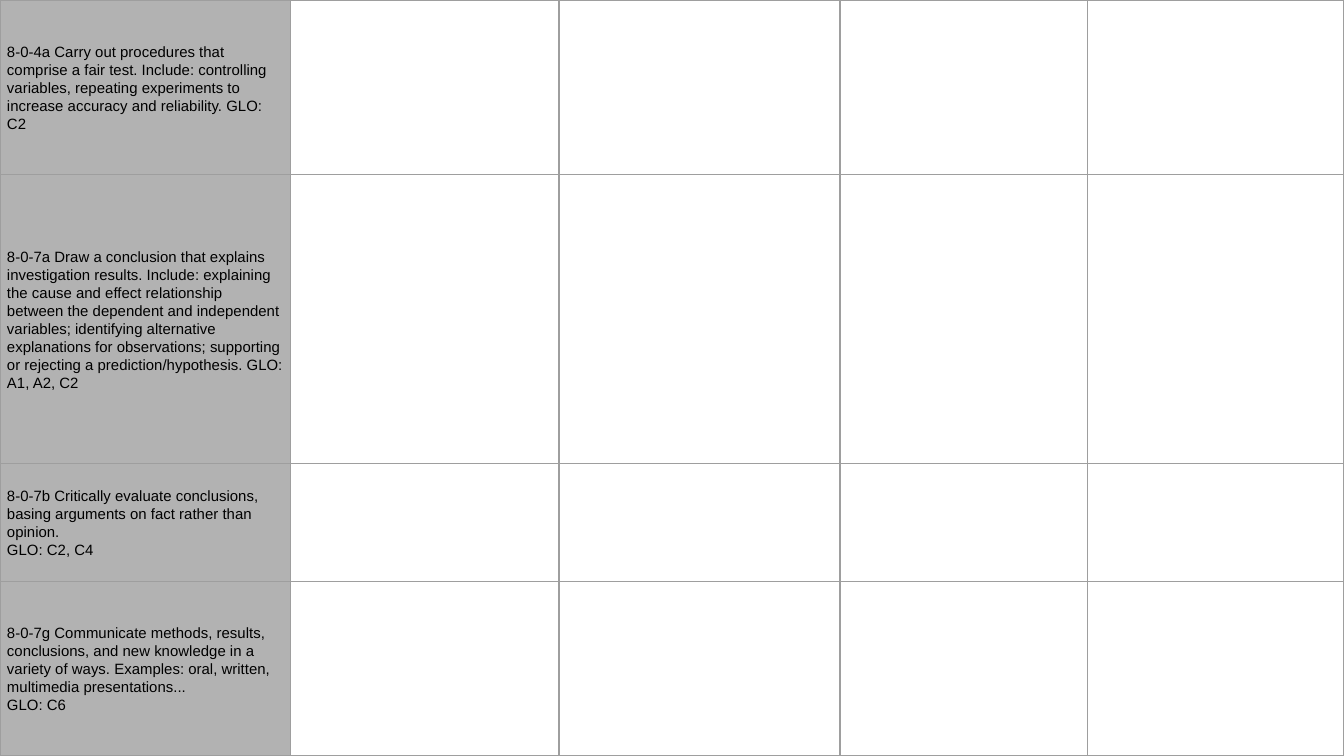
"""Build a slide with a science inquiry outcomes grid."""
from lxml import etree
from pptx import Presentation
from pptx.dml.color import RGBColor
from pptx.enum.text import MSO_ANCHOR
from pptx.oxml.ns import qn
from pptx.util import Inches, Pt

MIDDLE = MSO_ANCHOR.MIDDLE
BLANK_LAYOUT = 6
SLIDE_WIDTH = 10
SLIDE_HEIGHT = SLIDE_WIDTH * 9 / 16
COLUMN_WIDTHS = [2.16, 2, 2.09, 1.84, 1.91]
ROW_HEIGHTS = [1.3, 2.15, SLIDE_HEIGHT - 4.75, 1.3]
CELL_MARGIN = Pt(3.75)
COLORS = {"outcome": "B2B2B2", "blank": "FFFFFF", "border": "9E9E9E", "text": "000000"}
OUTCOMES = [
    ["8-0-4a Carry out procedures that comprise a fair test. Include: controlling "
     "variables, repeating experiments to increase accuracy and reliability. GLO: C2"],
    ["8-0-7a Draw a conclusion that explains investigation results. Include: "
     "explaining the cause and effect relationship between the dependent and "
     "independent variables; identifying alternative explanations for observations; "
     "supporting or rejecting a prediction/hypothesis. GLO: A1, A2, C2"],
    ["8-0-7b Critically evaluate conclusions, basing arguments on fact rather than "
     "opinion.", "GLO: C2, C4"],
    ["8-0-7g Communicate methods, results, conclusions, and new knowledge in a "
     "variety of ways. Examples: oral, written, multimedia presentations...",
     "GLO: C6"],
]


def color(name):
    """Return the named palette colour."""
    return RGBColor.from_string(COLORS[name])


def style_cell(cell, fill_name):
    """Give a cell its four borders and its fill."""
    properties = cell._tc.get_or_add_tcPr()
    for side in ("a:lnL", "a:lnR", "a:lnT", "a:lnB"):
        border = etree.SubElement(properties, qn(side), w=str(Pt(0.75)))
        border_fill = etree.SubElement(border, qn("a:solidFill"))
        etree.SubElement(border_fill, qn("a:srgbClr"), val=COLORS["border"])
    cell.fill.solid()
    cell.fill.fore_color.rgb = color(fill_name)


def write_outcome(cell, lines):
    """Write an outcome into its cell, one run per line."""
    cell.vertical_anchor = MIDDLE
    cell.margin_left = cell.margin_right = CELL_MARGIN
    cell.margin_top = cell.margin_bottom = CELL_MARGIN
    paragraph = cell.text_frame.paragraphs[0]
    paragraph.line_spacing = 1.07
    for index, line in enumerate(lines):
        if index:
            paragraph.add_line_break()
        run = paragraph.add_run()
        run.text = line
        run.font.name = "Arial"
        run.font.size = Pt(8)
        run.font.color.rgb = color("text")


def add_outcome_grid(slide):
    """Add the full-slide grid with outcomes down its first column."""
    grid = slide.shapes.add_table(
        len(ROW_HEIGHTS), len(COLUMN_WIDTHS), 0, 0,
        Inches(SLIDE_WIDTH), Inches(SLIDE_HEIGHT)).table
    grid.first_row = grid.horz_banding = False
    for column, width in zip(grid.columns, COLUMN_WIDTHS):
        column.width = Inches(width)
    for row, height, outcome in zip(grid.rows, ROW_HEIGHTS, OUTCOMES):
        row.height = Inches(height)
        for index, cell in enumerate(row.cells):
            style_cell(cell, "blank" if index else "outcome")
        write_outcome(row.cells[0], outcome)


def main():
    """Build and save the slide."""
    presentation = Presentation()
    presentation.slide_width = Inches(SLIDE_WIDTH)
    presentation.slide_height = Inches(SLIDE_HEIGHT)
    slide = presentation.slides.add_slide(presentation.slide_layouts[BLANK_LAYOUT])
    add_outcome_grid(slide)
    presentation.save("out.pptx")


if __name__ == "__main__":
    main()
